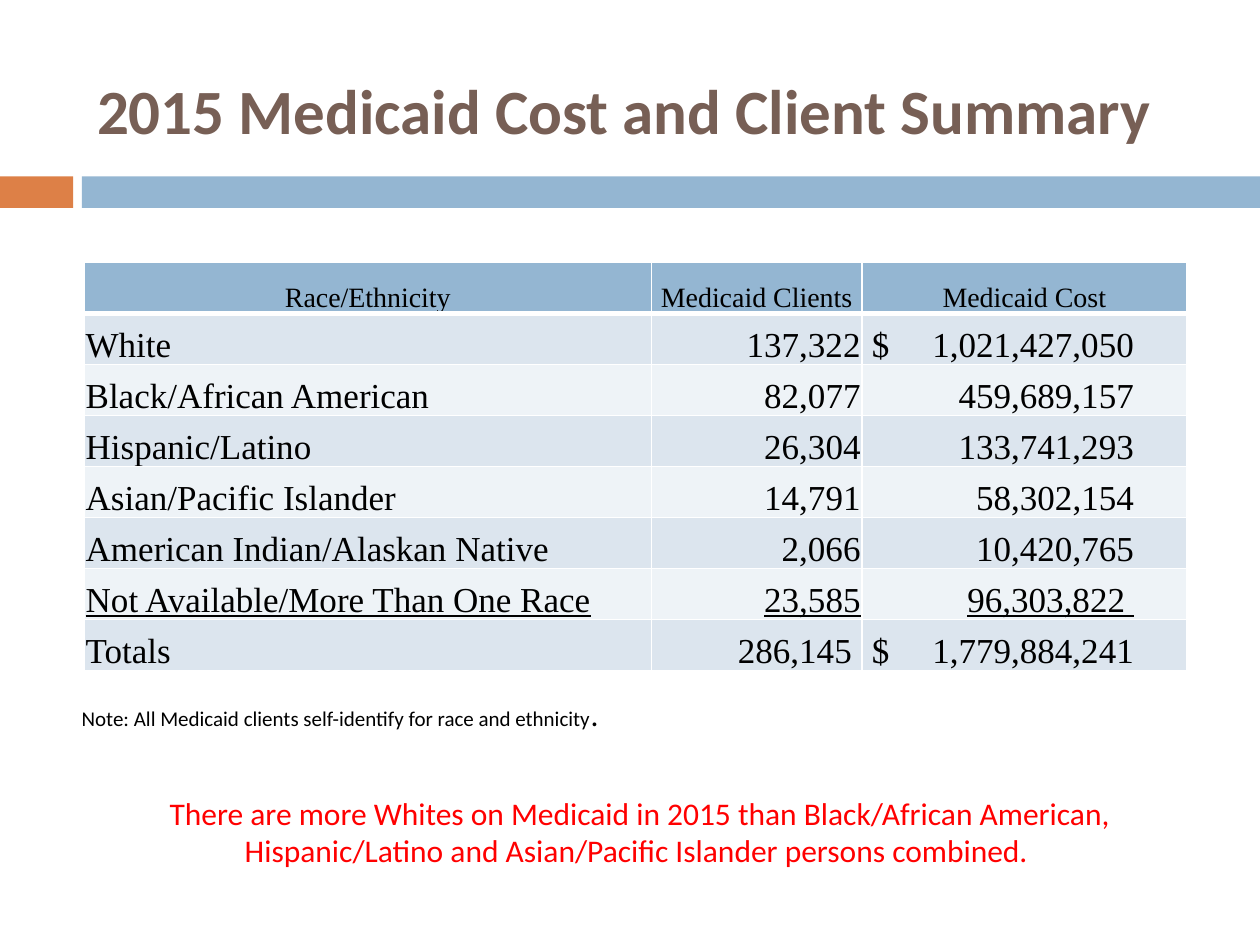
from typing import NamedTuple

from lxml import etree
from pptx import Presentation
from pptx.dml.color import RGBColor
from pptx.enum.shapes import MSO_SHAPE
from pptx.enum.text import MSO_ANCHOR, MSO_AUTO_SIZE, PP_ALIGN
from pptx.oxml.ns import qn
from pptx.util import Inches, Pt

LEFT, CENTER, RIGHT = PP_ALIGN.LEFT, PP_ALIGN.CENTER, PP_ALIGN.RIGHT
MIDDLE, BOTTOM = MSO_ANCHOR.MIDDLE, MSO_ANCHOR.BOTTOM
RECTANGLE, NO_AUTOFIT = MSO_SHAPE.RECTANGLE, MSO_AUTO_SIZE.NONE

SLIDE_WIDTH, SLIDE_HEIGHT = Inches(10), Inches(7.5)
SANS, SERIF = "Calibri", "Times New Roman"
ORANGE, BLUE, BROWN = "DD8047", "94B6D2", "775F55"
BLACK, WHITE, RED = "000000", "FFFFFF", "FF0000"
BAND_COLORS = ("DCE5EE", "EEF3F7")
CELL_INSET = Inches(0.01)
COST_TAB = Inches(2.15)


class Box(NamedTuple):
    """A place on the slide, in percent of its width and height."""
    left: float
    top: float
    width: float
    height: float

    def emu(self) -> tuple[int, int, int, int]:
        return (across(self.left), down(self.top),
                across(self.width), down(self.height))


class Group(NamedTuple):
    name: str
    clients: str
    cost: str
    underline: bool = False


class Bar(NamedTuple):
    box: Box
    color: str


BARS = (Bar(Box(0, 18.67, 5.8, 3.33), ORANGE),
        Bar(Box(6.5, 18.67, 93.5, 3.33), BLUE))
TITLE_BOX = Box(6.7, 4.4, 89.2, 14.4)
TABLE_BOX = Box(6.7, 27.8, 87.5, 43.2)
NOTE_BOX = Box(5.5, 72.93, 88.3, 5.33)
FINDING_BOX = Box(5.8, 83.33, 90, 9.47)

COLUMN_WIDTHS = (45, 16.7, 25.8)
HEADINGS = ("Race/Ethnicity", "Medicaid Clients", "Medicaid Cost")
GROUPS = (
    Group("White", "137,322", " $\t1,021,427,050"),
    Group("Black/African American", "82,077", "\t459,689,157"),
    Group("Hispanic/Latino", "26,304", "\t133,741,293"),
    Group("Asian/Pacific Islander", "14,791", "\t58,302,154"),
    Group("American Indian/Alaskan Native", "2,066", "\t10,420,765"),
    Group("Not Available/More Than One Race", "23,585", "\t96,303,822 ", True),
    Group("Totals", "286,145 ", " $\t1,779,884,241"),
)


def across(percent: float) -> int:
    return round(SLIDE_WIDTH * percent / 100)


def down(percent: float) -> int:
    return round(SLIDE_HEIGHT * percent / 100)


def rgb(color: str) -> RGBColor:
    return RGBColor.from_string(color)


def write(paragraph, text: str, *, size: float, font: str = SANS,
          color: str = BLACK, bold: bool = False, underline: bool = False,
          align: PP_ALIGN = LEFT) -> None:
    """Add one formatted run to a paragraph."""
    paragraph.alignment = align
    run = paragraph.add_run()
    run.text = text
    run.font.size, run.font.name = Pt(size), font
    run.font.bold, run.font.underline = bold, underline
    run.font.color.rgb = rgb(color)


def add_bar(slide, bar: Bar) -> None:
    shape = slide.shapes.add_shape(RECTANGLE, *bar.box.emu())
    shape.shadow.inherit = False
    shape.fill.solid()
    shape.fill.fore_color.rgb = rgb(bar.color)
    shape.line.fill.background()


def add_title(slide, text: str) -> None:
    title = slide.shapes.title
    title.left, title.top, title.width, title.height = TITLE_BOX.emu()
    frame = title.text_frame
    frame.auto_size, frame.vertical_anchor = NO_AUTOFIT, MIDDLE
    write(frame.paragraphs[0], text, size=36, color=BROWN, bold=True)


def add_text_box(slide, box: Box):
    """Add a wrapping text box and return its first paragraph."""
    frame = slide.shapes.add_textbox(*box.emu()).text_frame
    frame.word_wrap = True
    return frame.paragraphs[0]


def set_borders(cell, top: float, bottom: float) -> None:
    properties = cell._tc.get_or_add_tcPr()
    for side, points in (("L", 1), ("R", 1), ("T", top), ("B", bottom)):
        line = etree.SubElement(properties, qn(f"a:ln{side}"), w=str(Pt(points)))
        fill = etree.SubElement(line, qn("a:solidFill"))
        etree.SubElement(fill, qn("a:srgbClr"), val=WHITE)


def add_right_tab(paragraph, position: int) -> None:
    tabs = etree.SubElement(paragraph._p.get_or_add_pPr(), qn("a:tabLst"))
    etree.SubElement(tabs, qn("a:tab"), pos=str(position), algn="r")


def format_cell(cell, fill: str, top: float = 1, bottom: float = 1):
    """Style a cell and return its first paragraph."""
    cell.margin_left = cell.margin_right = cell.margin_top = CELL_INSET
    cell.margin_bottom = 0
    cell.vertical_anchor = BOTTOM
    set_borders(cell, top, bottom)
    cell.fill.solid()
    cell.fill.fore_color.rgb = rgb(fill)
    return cell.text_frame.paragraphs[0]


def add_summary_table(slide) -> None:
    table = slide.shapes.add_table(
        len(GROUPS) + 1, len(HEADINGS), *TABLE_BOX.emu()).table
    for column, width in zip(table.columns, COLUMN_WIDTHS):
        column.width = across(width)
    for column, heading in enumerate(HEADINGS):
        paragraph = format_cell(table.cell(0, column), BLUE, bottom=3)
        write(paragraph, heading, size=16, font=SERIF, align=CENTER)
    for row, group in enumerate(GROUPS, start=1):
        values = (group.name, group.clients, group.cost)
        for column, (value, align) in enumerate(zip(values, (LEFT, RIGHT, LEFT))):
            paragraph = format_cell(table.cell(row, column),
                                    BAND_COLORS[(row - 1) % 2],
                                    top=3 if row == 1 else 1)
            write(paragraph, value, size=20, font=SERIF,
                  underline=group.underline, align=align)
            if "\t" in value:
                add_right_tab(paragraph, COST_TAB)


def main() -> None:
    deck = Presentation()
    deck.slide_width, deck.slide_height = SLIDE_WIDTH, SLIDE_HEIGHT
    slide = deck.slides.add_slide(deck.slide_layouts.get_by_name("Title Only"))
    for bar in BARS:
        add_bar(slide, bar)
    add_title(slide, "2015 Medicaid Cost and Client Summary")
    add_summary_table(slide)
    note = add_text_box(slide, NOTE_BOX)
    write(note, "Note: All Medicaid clients self-identify for race and ethnicity",
          size=12)
    write(note, ".", size=18)
    write(add_text_box(slide, FINDING_BOX),
          "There are more Whites on Medicaid in 2015 than Black/African American, "
          "Hispanic/Latino and Asian/Pacific Islander persons combined. ",
          size=18, color=RED, align=CENTER)
    deck.save("out.pptx")


if __name__ == "__main__":
    main()
